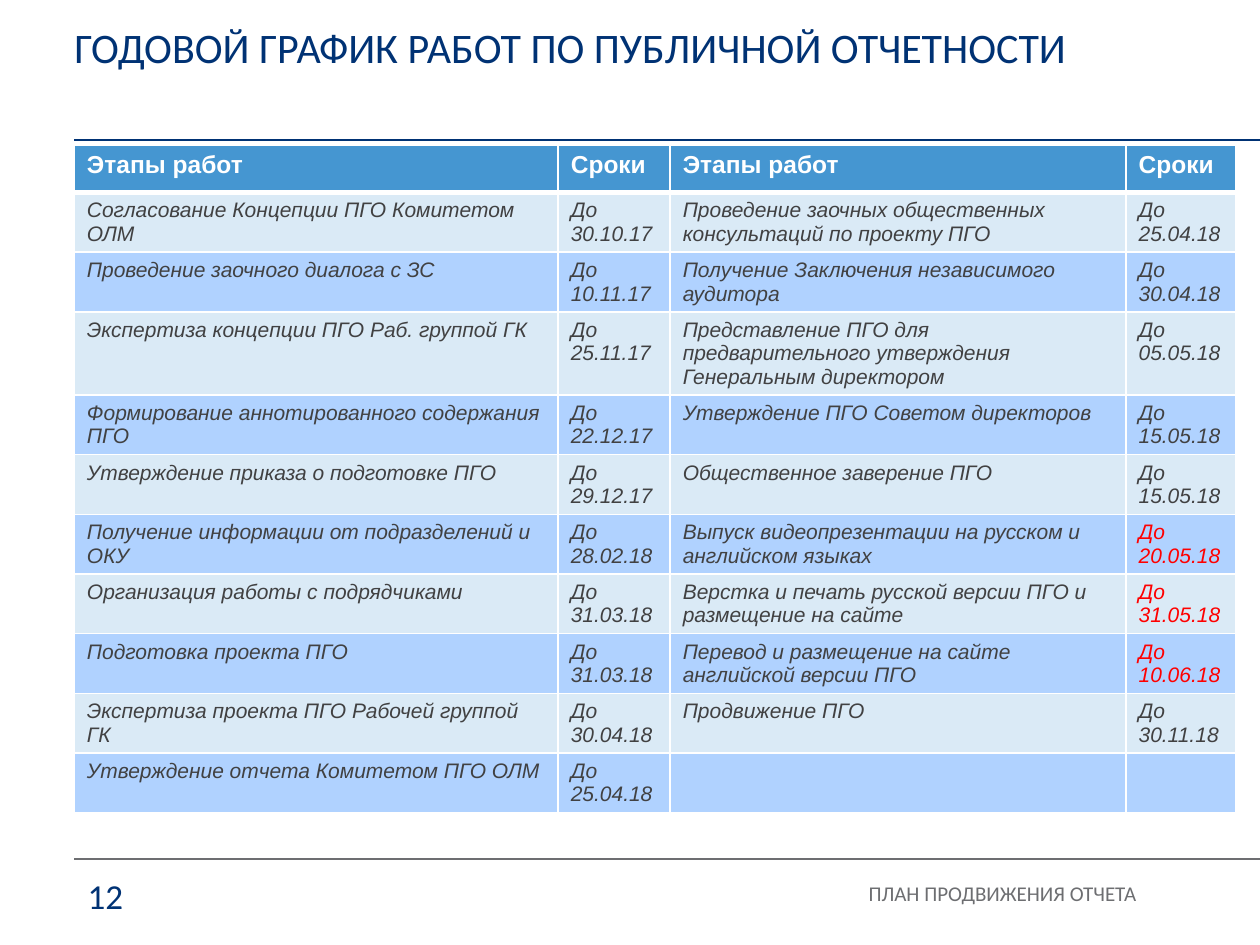
import pptx
import pptx.util
import pptx.dml.color
import pptx.enum.shapes
import pptx.enum.text
import pptx.oxml
import pptx.oxml.ns

Pt = pptx.util.Pt
ALIGN = pptx.enum.text.PP_ALIGN
ANCHOR = pptx.enum.text.MSO_ANCHOR

NAVY, GREY, DARK, WHITE, RED = "003274", "6D6E71", "414142", "FFFFFF", "FF0000"
HEADER_FILL, BAND_FILLS = "4596D1", ("DAEAF6", "B0D2FF")
COLUMN_WIDTHS = (276.5, 64, 260.5, 62.5)
HEADER_HEIGHT, TWO_LINE_HEIGHT, THREE_LINE_HEIGHT = 27, 34, 47.4
TALL_STAGE = 3
LEFT = 42.5

HEADINGS = ("Этапы работ", "Сроки") * 2
STAGES = [
    ("Согласование Концепции ПГО Комитетом ОЛМ", "До 30.10.17",
     "Проведение заочных общественных консультаций по проекту ПГО", "До 25.04.18"),
    ("Проведение заочного диалога с ЗС", "До 10.11.17",
     "Получение Заключения независимого аудитора", "До 30.04.18"),
    ("Экспертиза концепции ПГО Раб. группой ГК", "До 25.11.17",
     "Представление ПГО для предварительного утверждения Генеральным директором", "До 05.05.18"),
    ("Формирование аннотированного содержания ПГО", "До 22.12.17",
     "Утверждение ПГО Советом директоров", "До 15.05.18"),
    ("Утверждение приказа о подготовке ПГО", "До 29.12.17",
     "Общественное заверение ПГО", "До 15.05.18"),
    ("Получение информации от подразделений и ОКУ", "До 28.02.18",
     "Выпуск видеопрезентации на русском и английском языках", "До 20.05.18"),
    ("Организация работы с подрядчиками", "До 31.03.18",
     "Верстка и печать русской версии ПГО и размещение на сайте", "До 31.05.18"),
    ("Подготовка проекта ПГО", "До 31.03.18",
     "Перевод и размещение на сайте английской версии ПГО", "До 10.06.18"),
    ("Экспертиза проекта ПГО Рабочей группой ГК", "До 30.04.18",
     "Продвижение ПГО", "До 30.11.18"),
    ("Утверждение отчета Комитетом ПГО ОЛМ", "До 25.04.18", "", ""),
]
URGENT_DATES = {"До 20.05.18", "До 31.05.18", "До 10.06.18"}


def rgb(value):
    return pptx.dml.color.RGBColor.from_string(value)


def add_run(paragraph, text, size, color, font="Calibri", bold=False, italic=False):
    run = paragraph.add_run()
    run.text = text
    run.font.size = Pt(size)
    run.font.name = font
    run.font.bold = bold
    run.font.italic = italic
    run.font.color.rgb = rgb(color)


def set_frame(frame, anchor, side=0, vertical=0):
    frame.word_wrap = True
    frame.auto_size = pptx.enum.text.MSO_AUTO_SIZE.NONE
    frame.vertical_anchor = anchor
    frame.margin_left = frame.margin_right = Pt(side)
    frame.margin_top = frame.margin_bottom = Pt(vertical)


def add_rule(slide, left, top, width, color):
    rule = slide.shapes.add_connector(
        pptx.enum.shapes.MSO_CONNECTOR.STRAIGHT, Pt(left), Pt(top), Pt(left + width), Pt(top))
    rule.line.color.rgb = rgb(color)
    rule.line.width = Pt(1)
    rule._element.spPr.append(pptx.oxml.parse_xml(
        f"<a:effectLst {pptx.oxml.ns.nsdecls('a')}/>"))


def place_heading(slide, left, top, width, height):
    heading = slide.shapes.title
    heading.left, heading.top, heading.width, heading.height = map(Pt, (left, top, width, height))
    set_frame(heading.text_frame, ANCHOR.TOP, vertical=3)
    paragraph = heading.text_frame.paragraphs[0]
    paragraph.alignment = ALIGN.LEFT
    add_run(paragraph, "ГОДОВОЙ ГРАФИК РАБОТ ПО ПУБЛИЧНОЙ ОТЧЕТНОСТИ", 24, NAVY)


def set_borders(cell, top, bottom):
    properties = cell._tc.get_or_add_tcPr()
    sides = (("lnL", 1), ("lnR", 1), ("lnT", top), ("lnB", bottom))
    for position, (side, width) in enumerate(sides):
        properties.insert(position, pptx.oxml.parse_xml(
            f'<a:{side} {pptx.oxml.ns.nsdecls("a")} w="{Pt(width)}"><a:solidFill>'
            f'<a:srgbClr val="{WHITE}"/></a:solidFill></a:{side}>'))


def place_schedule(slide, left, top, width):
    heights = [HEADER_HEIGHT] + [TWO_LINE_HEIGHT] * len(STAGES)
    heights[TALL_STAGE] = THREE_LINE_HEIGHT
    schedule = slide.shapes.add_table(
        len(heights), len(COLUMN_WIDTHS), Pt(left), Pt(top), Pt(width), Pt(sum(heights))).table
    for column, share in zip(schedule.columns, COLUMN_WIDTHS):
        column.width = Pt(width * share / sum(COLUMN_WIDTHS))
    for row, height in zip(schedule.rows, heights):
        row.height = Pt(height)

    for row_index, texts in enumerate([HEADINGS] + STAGES):
        is_header = row_index == 0
        fill = HEADER_FILL if is_header else BAND_FILLS[(row_index - 1) % 2]
        for column_index, text in enumerate(texts):
            cell = schedule.cell(row_index, column_index)
            cell.fill.solid()
            cell.fill.fore_color.rgb = rgb(fill)
            set_borders(cell, 3 if row_index == 1 else 1, 3 if is_header else 1)
            paragraph = cell.text_frame.paragraphs[0]
            if is_header:
                add_run(paragraph, text, 14, WHITE, "Arial", bold=True)
            elif text:
                color = RED if text in URGENT_DATES else DARK
                add_run(paragraph, text, 12, color, "Arial", italic=True)


def place_footer(slide, left, top, width):
    add_rule(slide, left, top, width, GREY)

    page = slide.shapes.add_textbox(Pt(left - 16), Pt(top + 7), Pt(51), Pt(28)).text_frame
    set_frame(page, ANCHOR.MIDDLE, side=7.2, vertical=3.6)
    page.paragraphs[0].alignment = ALIGN.RIGHT
    add_run(page.paragraphs[0], "12", 20, NAVY)

    section = slide.shapes.add_textbox(
        Pt(left + 198.5), Pt(top + 13.7), Pt(408.5), Pt(33)).text_frame
    set_frame(section, ANCHOR.TOP)
    section.paragraphs[0].alignment = ALIGN.RIGHT
    section.paragraphs[0].line_spacing = Pt(13)
    add_run(section.paragraphs[0], "ПЛАН ПРОДВИЖЕНИЯ ОТЧЕТА", 12, GREY)


def main():
    deck = pptx.Presentation()
    deck.slide_width, deck.slide_height = Pt(720), Pt(540)
    slide = deck.slides.add_slide(deck.slide_layouts[5])
    place_heading(slide, LEFT, 9.5, 648, 67.5)
    add_rule(slide, LEFT, 80, 720 - LEFT, NAVY)
    place_schedule(slide, LEFT, 83, sum(COLUMN_WIDTHS))
    place_footer(slide, LEFT, 491, 720 - LEFT)
    deck.save("out.pptx")


if __name__ == "__main__":
    main()
